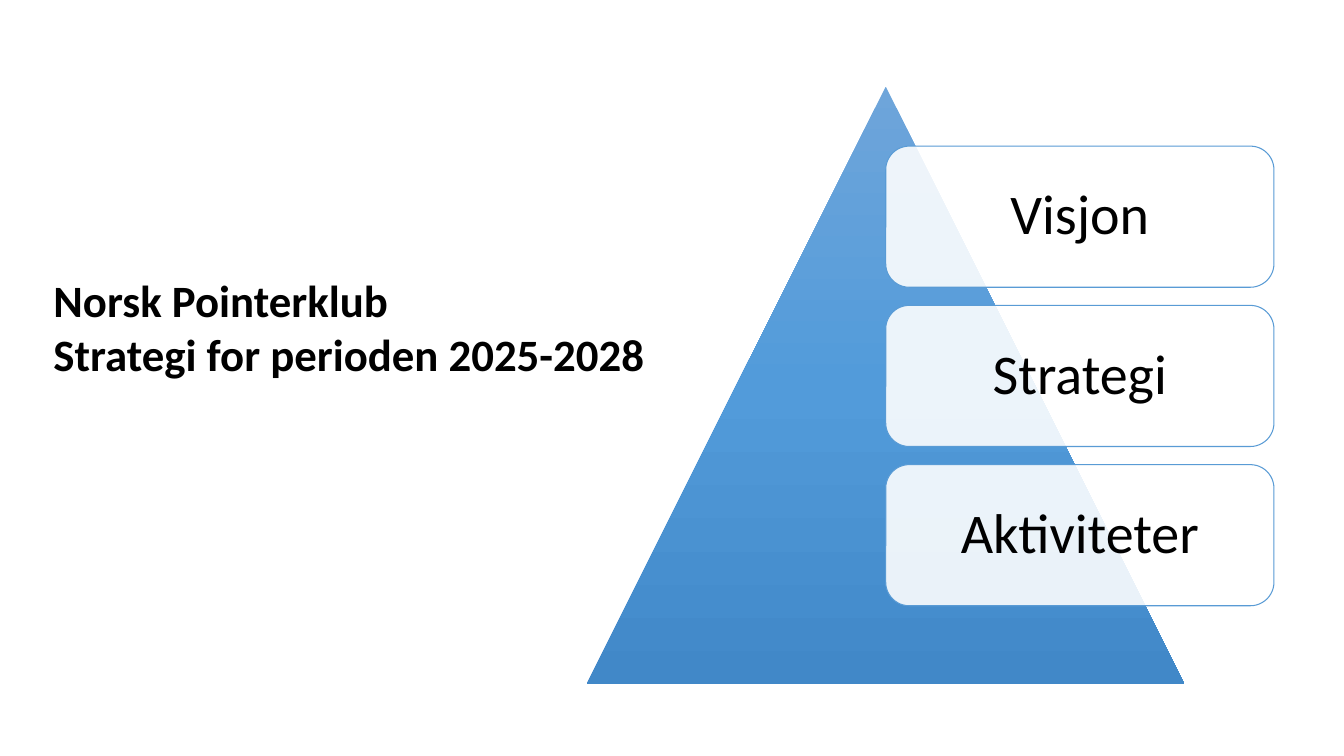
from copy import deepcopy

from pptx import Presentation
from pptx import util as u
from pptx.dml.color import RGBColor
from pptx.enum import shapes, text
from pptx.oxml import ns, xmlchemy

WIDTH, HEIGHT = u.Inches(13.33), u.Inches(7.5)
BLACK = RGBColor(0x00, 0x00, 0x00)
WHITE = RGBColor(0xFF, 0xFF, 0xFF)
CARD_LINE = RGBColor(0x59, 0x9B, 0xD5)
PYRAMID_STOPS = [
    (0, RGBColor(0x6E, 0xA5, 0xDA)),
    (0.5, RGBColor(0x52, 0x9B, 0xDA)),
    (1, RGBColor(0x41, 0x88, 0xC8)),
]
TITLE_LINES = ["Norsk Pointerklub", "Strategi for perioden 2025-2028"]
LEVELS = ["Visjon", "Strategi", "Aktiviteter"]

PYRAMID_LEFT, PYRAMID_TOP, PYRAMID_SIDE = 5.82, 0.86, 5.93
CARD_LEFT = PYRAMID_LEFT + PYRAMID_SIDE / 2
CARD_TOP, CARD_WIDTH, CARD_HEIGHT, CARD_STEP = 1.45, 3.85, 1.4, 1.58

TITLE_FRAME = {
    "word_wrap": True,
    "vertical_anchor": text.MSO_ANCHOR.TOP,
    "auto_size": text.MSO_AUTO_SIZE.SHAPE_TO_FIT_TEXT,
    "margin_left": u.Inches(0.1),
    "margin_right": u.Inches(0.1),
    "margin_top": u.Inches(0.05),
    "margin_bottom": u.Inches(0.05),
}
TITLE_PARA = {
    "alignment": text.PP_ALIGN.LEFT,
    "line_spacing": 1.0,
    "space_before": u.Pt(0),
}
TITLE_FONT = {"name": "Calibri", "size": u.Pt(32), "bold": True}
CARD_FRAME = {
    "word_wrap": True,
    "vertical_anchor": text.MSO_ANCHOR.MIDDLE,
    "margin_left": u.Inches(0.22),
    "margin_right": u.Inches(0.22),
    "margin_top": u.Inches(0.22),
    "margin_bottom": u.Inches(0.22),
}
CARD_PARA = {"alignment": text.PP_ALIGN.CENTER, "line_spacing": 0.9}
CARD_FONT = {"name": "Calibri", "size": u.Pt(40), "bold": False}


def apply_format(target, values):
    for name, value in values.items():
        setattr(target, name, value)


def write_lines(shape, lines, frame_format, para_format, font_format):
    frame = shape.text_frame
    apply_format(frame, frame_format)
    for index, line in enumerate(lines):
        para = frame.add_paragraph() if index else frame.paragraphs[0]
        apply_format(para, para_format)
        span = para.add_run()
        span.text = line
        apply_format(span.font, font_format)
        span.font.color.rgb = BLACK


def add_shape(page, kind, left, top, width, height):
    box = [u.Inches(value) for value in (left, top, width, height)]
    shape = page.shapes.add_shape(kind, *box)
    shape.shadow.inherit = False
    return shape


def add_title(page, lines):
    title = page.shapes.title
    place = {
        "left": u.Inches(0.43),
        "top": u.Inches(2.66),
        "width": u.Inches(6.12),
        "height": u.Inches(1.18),
    }
    apply_format(title, place)
    write_lines(title, lines, TITLE_FRAME, TITLE_PARA, TITLE_FONT)


def add_pyramid(page):
    pyramid = add_shape(page, shapes.MSO_SHAPE.ISOSCELES_TRIANGLE,
                        PYRAMID_LEFT, PYRAMID_TOP, PYRAMID_SIDE, PYRAMID_SIDE)
    pyramid.line.fill.background()
    pyramid.fill.gradient()
    pyramid.fill.gradient_angle = 270
    stop_list = next(pyramid.element.iter(ns.qn("a:gsLst")))
    stop_list.append(deepcopy(stop_list[-1]))
    for stop, (position, color) in zip(pyramid.fill.gradient_stops, PYRAMID_STOPS):
        stop.position = position
        stop.color.rgb = color


def set_opacity(shape, percent):
    fill = shape.element.spPr.find(ns.qn("a:solidFill"))
    alpha = xmlchemy.OxmlElement("a:alpha")
    alpha.set("val", str(percent * 1000))
    fill[0].append(alpha)


def add_card(page, row, label):
    card = add_shape(page, shapes.MSO_SHAPE.ROUNDED_RECTANGLE, CARD_LEFT,
                     CARD_TOP + row * CARD_STEP, CARD_WIDTH, CARD_HEIGHT)
    card.fill.solid()
    card.fill.fore_color.rgb = WHITE
    set_opacity(card, 89)
    card.line.color.rgb = CARD_LINE
    card.line.width = u.Pt(0.75)
    write_lines(card, [label], CARD_FRAME, CARD_PARA, CARD_FONT)


def main():
    deck = Presentation()
    apply_format(deck, {"slide_width": WIDTH, "slide_height": HEIGHT})
    page = deck.slides.add_slide(deck.slide_layouts.get_by_name("Title Only"))
    add_title(page, TITLE_LINES)
    add_pyramid(page)
    for row, label in enumerate(LEVELS):
        add_card(page, row, label)
    deck.save("out.pptx")


if __name__ == "__main__":
    main()
